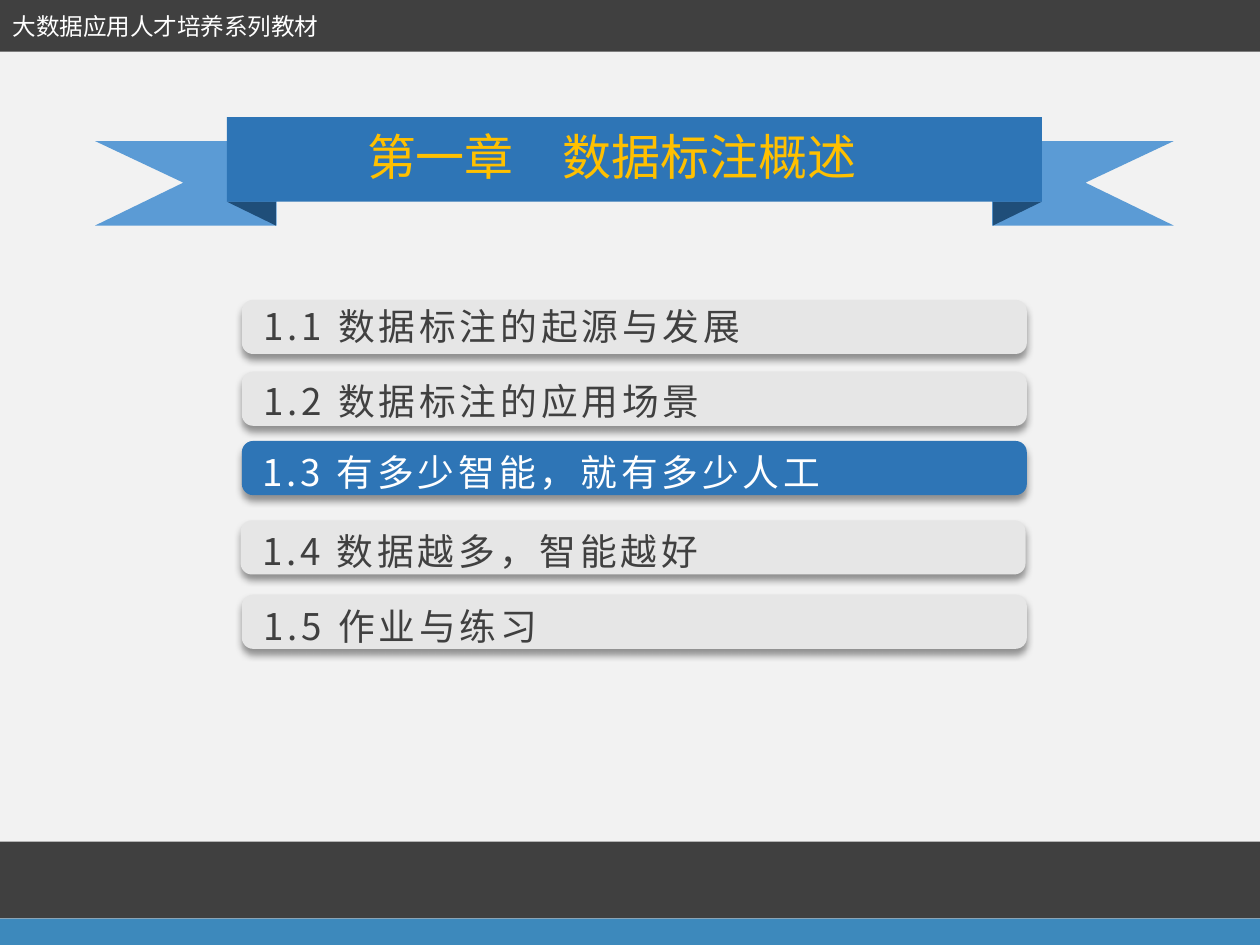
from lxml.etree import SubElement
from pptx import Presentation
from pptx.dml.color import RGBColor
from pptx.enum.shapes import MSO_SHAPE as Shape
from pptx.enum.text import MSO_ANCHOR as Anchor, PP_ALIGN as Align
from pptx.oxml.ns import qn
from pptx.util import Inches, Pt

FONT = "Noto Sans CJK SC"
PAPER = RGBColor(0xF2, 0xF2, 0xF2)
CHARCOAL = RGBColor(0x40, 0x40, 0x40)
FOOTER_BLUE = RGBColor(0x3D, 0x89, 0xBC)
BANNER_BLUE = RGBColor(0x2E, 0x75, 0xB6)
TAIL_BLUE = RGBColor(0x5B, 0x9B, 0xD5)
FOLD_BLUE = RGBColor(0x1F, 0x4E, 0x79)
ROW_GREY = RGBColor(0xE6, 0xE6, 0xE6)
GOLD = RGBColor(0xFF, 0xC0, 0x00)
WHITE = RGBColor(0xFF, 0xFF, 0xFF)

SLIDE_WIDTH, SLIDE_HEIGHT = 10, 7.5
BANNER_CENTER = 5.035
ROW_WIDTH, ROW_HEIGHT = 6.23, 0.43
LETTER_SPACING = 2.2
CURRENT_SECTION = "1.3"

# heading, bar left, bar top, text left, text top, text width
SECTIONS = [
    ("1.1 数据标注的起源与发展", 1.92, 2.38, 2, 2.36, 4.09),
    ("1.2 数据标注的应用场景", 1.92, 2.95, 2, 2.96, 3.77),
    ("1.3 有多少智能，就有多少人工", 1.92, 3.5, 1.99, 3.52, 4.75),
    ("1.4 数据越多，智能越好", 1.91, 4.13, 1.99, 4.15, 3.77),
    ("1.5 作业与练习", 1.92, 4.72, 2, 4.74, 2.46),
]


def paint(shape, color):
    shape.shadow.inherit = False
    shape.fill.solid()
    shape.fill.fore_color.rgb = color
    shape.line.fill.background()


def add_block(shapes, kind, left, top, width, height, color):
    block = shapes.add_shape(kind, Inches(left), Inches(top), Inches(width), Inches(height))
    paint(block, color)
    return block


def add_drop_shadow(shape):
    effects = shape._element.spPr.find(qn("a:effectLst"))
    shadow = SubElement(effects, qn("a:outerShdw"), blurRad=str(Pt(4)), dist=str(Pt(3)),
                        dir="5400000", algn="t", rotWithShape="0")
    black = SubElement(shadow, qn("a:srgbClr"), val="000000")
    SubElement(black, qn("a:alpha"), val="40000")


def format_run(run, size, color, spacing=0):
    run.font.size = Pt(size)
    run.font.name = FONT
    run.font.color.rgb = color
    properties = run.font._element
    SubElement(properties, qn("a:ea"), typeface=FONT)
    if spacing:
        properties.set("spc", str(round(spacing * 100)))


def set_up_frame(frame, left_margin, right_margin):
    frame.word_wrap = False
    frame.vertical_anchor = Anchor.MIDDLE
    frame.margin_left, frame.margin_right = Inches(left_margin), Inches(right_margin)
    frame.margin_top = frame.margin_bottom = Inches(0.04)


def add_label(shapes, text, left, top, width, height, size, color, spacing=0):
    label = shapes.add_textbox(Inches(left), Inches(top), Inches(width), Inches(height))
    set_up_frame(label.text_frame, 0.09, 0)
    label.text_frame.text = text
    format_run(label.text_frame.paragraphs[0].runs[0], size, color, spacing)


def add_ribbon_end(shapes, side):
    """Draw the notched tail and its fold; side is -1 for left, 1 for right."""
    outline = [(Inches(BANNER_CENTER + side * reach), Inches(y)) for reach, y in
               [(4.28, 1.12), (2.84, 1.12), (2.84, 1.79), (4.28, 1.79), (3.58, 1.45)]]
    builder = shapes.build_freeform(*outline[0], scale=1.0)
    builder.add_line_segments(outline[1:], close=True)
    paint(builder.convert_to_shape(), TAIL_BLUE)

    fold_width = 0.19
    fold_left = BANNER_CENTER + side * 3.04 - fold_width / 2
    fold = add_block(shapes, Shape.RIGHT_TRIANGLE, fold_left, 1.5, fold_width, 0.39, FOLD_BLUE)
    fold.rotation = 180 + side * 90
    xfrm = fold._element.spPr.find(qn("a:xfrm"))
    xfrm.set("flipV", "1")
    if side > 0:
        xfrm.set("flipH", "1")


def add_chapter_banner(slide):
    ribbon = slide.shapes.add_group_shape().shapes
    for side in (-1, 1):
        add_ribbon_end(ribbon, side)
    add_block(ribbon, Shape.RECTANGLE, 1.8, 0.93, 6.47, 0.67, BANNER_BLUE)

    title = slide.shapes.title
    title.left, title.top = Inches(2.79), Inches(0.95)
    title.width, title.height = Inches(4.13), Inches(0.57)
    title.text_frame.text = "第一章　数据标注概述"
    set_up_frame(title.text_frame, 0.08, 0.08)
    heading = title.text_frame.paragraphs[0]
    heading.alignment = Align.CENTER
    format_run(heading.runs[0], 28, GOLD)
    slide.shapes._spTree.append(title._element)  # bring in front of the ribbon


def add_section(slide, heading, bar_left, bar_top, text_left, text_top, text_width):
    current = heading.startswith(CURRENT_SECTION)
    row = slide.shapes.add_group_shape().shapes
    bar = add_block(row, Shape.ROUNDED_RECTANGLE, bar_left, bar_top, ROW_WIDTH, ROW_HEIGHT,
                    BANNER_BLUE if current else ROW_GREY)
    bar.adjustments[0] = 0.207
    add_drop_shadow(bar)
    add_label(row, heading, text_left, text_top, text_width, 0.45, 21,
              WHITE if current else CHARCOAL, LETTER_SPACING)


def add_page_bands(slide):
    for top, height, color in ((0, 0.41, CHARCOAL), (6.68, 0.61, CHARCOAL),
                               (7.29, 0.21, FOOTER_BLUE)):
        add_block(slide.shapes, Shape.RECTANGLE, 0, top, SLIDE_WIDTH, height, color)
    add_label(slide.shapes, "大数据应用人才培养系列教材", 0.01, 0.04, 2.66, 0.33, 13.5, WHITE)


def main():
    deck = Presentation()
    deck.slide_width, deck.slide_height = Inches(SLIDE_WIDTH), Inches(SLIDE_HEIGHT)
    slide = deck.slides.add_slide(deck.slide_layouts[5])
    slide.background.fill.solid()
    slide.background.fill.fore_color.rgb = PAPER
    add_chapter_banner(slide)
    for section in SECTIONS:
        add_section(slide, *section)
    add_page_bands(slide)
    deck.save("out.pptx")


if __name__ == "__main__":
    main()
